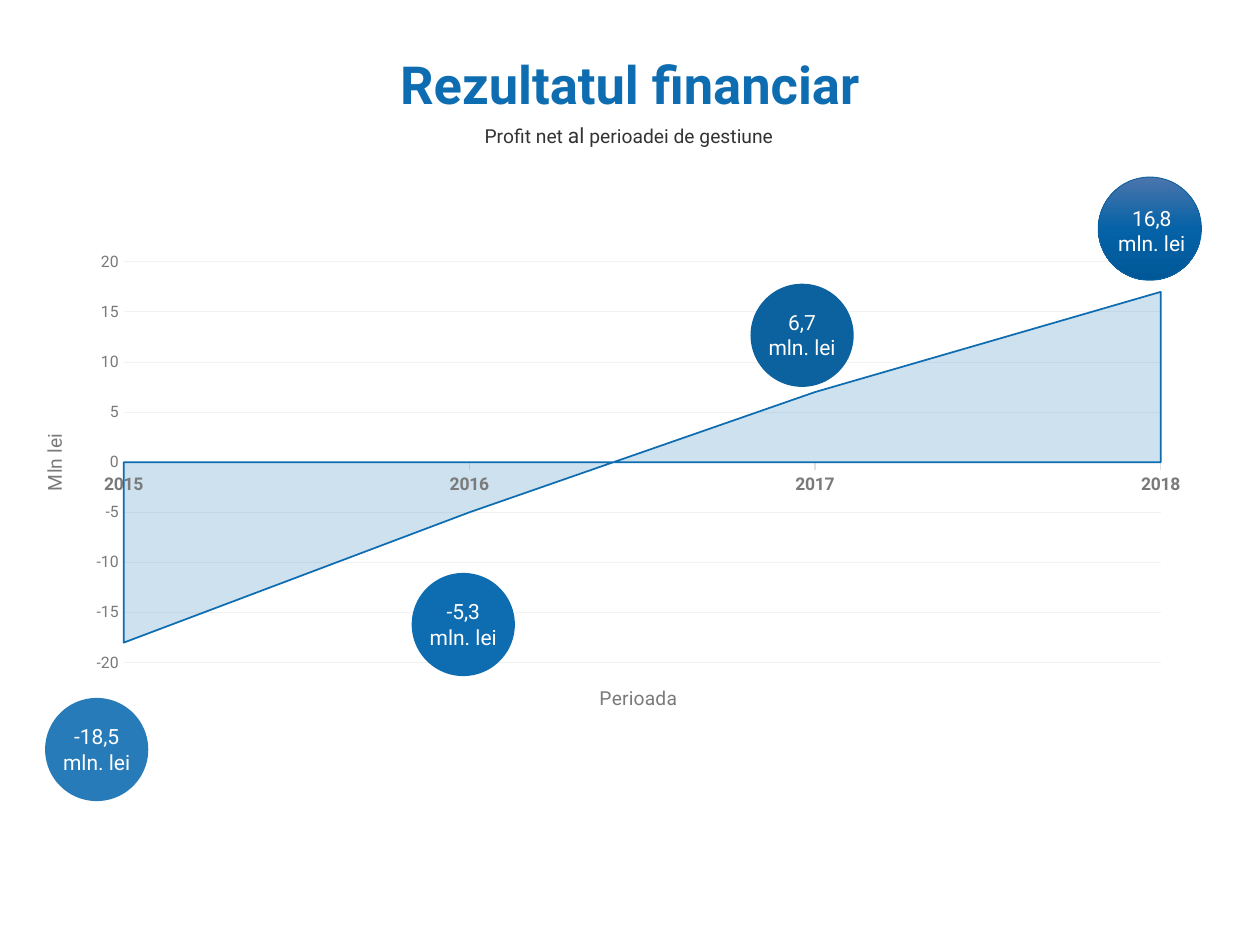
from copy import deepcopy
from dataclasses import dataclass

from lxml import etree
from pptx import Presentation
from pptx.chart.data import CategoryChartData
from pptx.dml.color import RGBColor
from pptx.enum.chart import XL_CHART_TYPE, XL_TICK_MARK
from pptx.enum.shapes import MSO_SHAPE
from pptx.enum.text import MSO_ANCHOR, PP_ALIGN
from pptx.oxml import parse_xml
from pptx.oxml.ns import nsdecls, qn
from pptx.util import Cm, Pt

AREA = XL_CHART_TYPE.AREA
TICK_OUT, TICK_NONE = XL_TICK_MARK.OUTSIDE, XL_TICK_MARK.NONE
OVAL = MSO_SHAPE.OVAL
MIDDLE = MSO_ANCHOR.MIDDLE
CENTER = PP_ALIGN.CENTER


@dataclass(frozen=True)
class Theme:
    font: str = "Roboto"
    blue: str = "0E6DB1"
    light_blue: str = "267BB8"
    dark_blue: str = "0C619F"
    gradient: tuple = ((0, "4B75AC"), (0.5, "0562A6"), (1, "005898"))
    text: str = "333333"
    axis: str = "7A7A7A"
    axis_line: str = "E0E0E0"
    grid: str = "F2F2F2"
    white: str = "FFFFFF"
    title_size: int = 30
    body_size: int = 12
    small_size: int = 11
    category_size: int = 10
    value_size: int = 9
    chart_size: int = 7


THEME = Theme()
BUBBLE_SIZE = 2.08


def rgb(color):
    return RGBColor.from_string(color)


def style_font(font, size, color, bold=False):
    font.name, font.size, font.bold = THEME.font, Pt(size), bold
    font.color.rgb = rgb(color)


def add_heading(slide, box, pieces, color, bold=False):
    """Place one centred line made of (text, size) pieces."""
    frame = slide.shapes.add_textbox(*map(Cm, box)).text_frame
    frame.word_wrap = True
    frame.vertical_anchor = MIDDLE
    line = frame.paragraphs[0]
    line.alignment = CENTER
    line.space_before = Pt(9)
    for text, size in pieces:
        run = line.add_run()
        run.text = text
        style_font(run.font, size, color, bold)


def style_axis(axis, title, size, bold=False):
    axis.has_title = True
    axis.axis_title.text_frame.text = title
    title_run = axis.axis_title.text_frame.paragraphs[0].runs[0]
    style_font(title_run.font, THEME.small_size, THEME.axis)
    style_font(axis.tick_labels.font, size, THEME.axis, bold)


def set_plot_area(chart, x, y, w, h):
    """Fix the inner plot area, as fractions of the chart."""
    plot_area = chart._chartSpace.chart.plotArea
    for layout in plot_area.findall(qn("c:layout")):
        plot_area.remove(layout)
    places = "".join(f'<c:{name} val="{value}"/>' for name, value in
                     zip("xywh", (x, y, w, h)))
    plot_area.insert(0, parse_xml(
        f'<c:layout {nsdecls("c")}><c:manualLayout>'
        '<c:layoutTarget val="inner"/><c:xMode val="edge"/>'
        f'<c:yMode val="edge"/>{places}</c:manualLayout></c:layout>'))


def add_profit_chart(slide, box):
    data = CategoryChartData()
    data.categories = ["2015", "2016", "2017", "2018"]
    data.add_series("Series 1", (-18, -5, 7, 17))
    chart = slide.shapes.add_chart(AREA, *map(Cm, box), data).chart
    chart.has_legend = chart.has_title = False
    style_font(chart.font, THEME.chart_size, THEME.text)

    years, amounts = chart.category_axis, chart.value_axis
    style_axis(years, "Perioada", THEME.category_size, bold=True)
    years.has_major_gridlines = False
    years.major_tick_mark = TICK_OUT
    years.minor_tick_mark = TICK_NONE
    years.format.line.color.rgb = rgb(THEME.axis_line)
    years.format.line.width = Pt(0.75)

    style_axis(amounts, "Mln lei", THEME.value_size)
    amounts.minimum_scale, amounts.maximum_scale = -20, 20
    amounts.major_unit = 5
    amounts.major_tick_mark = amounts.minor_tick_mark = TICK_NONE
    amounts.format.line.fill.background()
    amounts.has_major_gridlines = True
    grid = amounts.major_gridlines.format.line
    grid.color.rgb, grid.width = rgb(THEME.grid), Pt(0.5)

    # The area starts on the value axis instead of half a category in.
    value_xml = chart._chartSpace.find(".//" + qn("c:valAx"))
    value_xml.find(qn("c:crossBetween")).set("val", "midCat")

    profit = chart.plots[0].series[0]
    profit.format.fill.solid()
    profit.format.fill.fore_color.rgb = rgb(THEME.blue)
    fill_color = profit.format.fill._xPr.find(".//" + qn("a:srgbClr"))
    etree.SubElement(fill_color, qn("a:alpha")).set("val", "20000")
    profit.format.line.color.rgb = rgb(THEME.blue)
    profit.format.line.width = Pt(1)
    set_plot_area(chart, 0.09, 0.04, 0.87, 0.81)


def fill_gradient(fill, stops):
    """Fill from top to bottom with three (position, colour) stops."""
    fill.gradient()
    fill.gradient_angle = 270
    first = fill.gradient_stops[0]._gs
    first.addnext(deepcopy(first))
    for stop, (position, color) in zip(fill.gradient_stops, stops):
        stop.position = position
        stop.color.rgb = rgb(color)


def add_bubble(slide, left, top, label, color, shift=0):
    """Group a circle with its label; a tuple as colour gives a gradient."""
    group = slide.shapes.add_group_shape()
    circle = group.shapes.add_shape(
        OVAL, Cm(left), Cm(top), Cm(BUBBLE_SIZE), Cm(BUBBLE_SIZE))
    circle.shadow.inherit = False
    if isinstance(color, tuple):
        fill_gradient(circle.fill, color)
        circle.line.color.rgb = rgb(THEME.dark_blue)
        circle.line.width = Pt(0.5)
    else:
        circle.fill.solid()
        circle.fill.fore_color.rgb = rgb(color)
        circle.line.fill.background()

    frame = group.shapes.add_textbox(
        Cm(left + shift), Cm(top + 0.4 + shift),
        Cm(BUBBLE_SIZE), Cm(1.27)).text_frame
    frame.word_wrap = True
    frame.text = label
    for paragraph in frame.paragraphs:
        paragraph.alignment = CENTER
        style_font(paragraph.runs[0].font, THEME.body_size, THEME.white)


def main():
    deck = Presentation()
    deck.slide_width, deck.slide_height = Cm(25.4), Cm(19.05)
    slide = deck.slides.add_slide(deck.slide_layouts[6])

    add_heading(slide, (1.6, 0.97, 22.2, 1.42),
                [("Rezultatul financiar", THEME.title_size)],
                THEME.blue, bold=True)
    add_heading(slide, (1.58, 2.29, 22.2, 0.86),
                [("Profit net ", THEME.small_size), ("al", THEME.body_size),
                 (" perioadei de gestiune", THEME.small_size)], THEME.text)
    add_profit_chart(slide, (0.33, 4.88, 24.03, 9.98))

    for bubble in (
        (0.91, 14.07, "-18,5 mln. lei", THEME.light_blue),
        (8.3, 11.55, "-5,3\nmln. lei", THEME.blue),
        (15.13, 5.72, "6,7\nmln. lei", THEME.dark_blue),
        (22.14, 3.57, "16,8 mln. lei", THEME.gradient, 0.04),
    ):
        add_bubble(slide, *bubble)

    deck.save("out.pptx")


if __name__ == "__main__":
    main()
